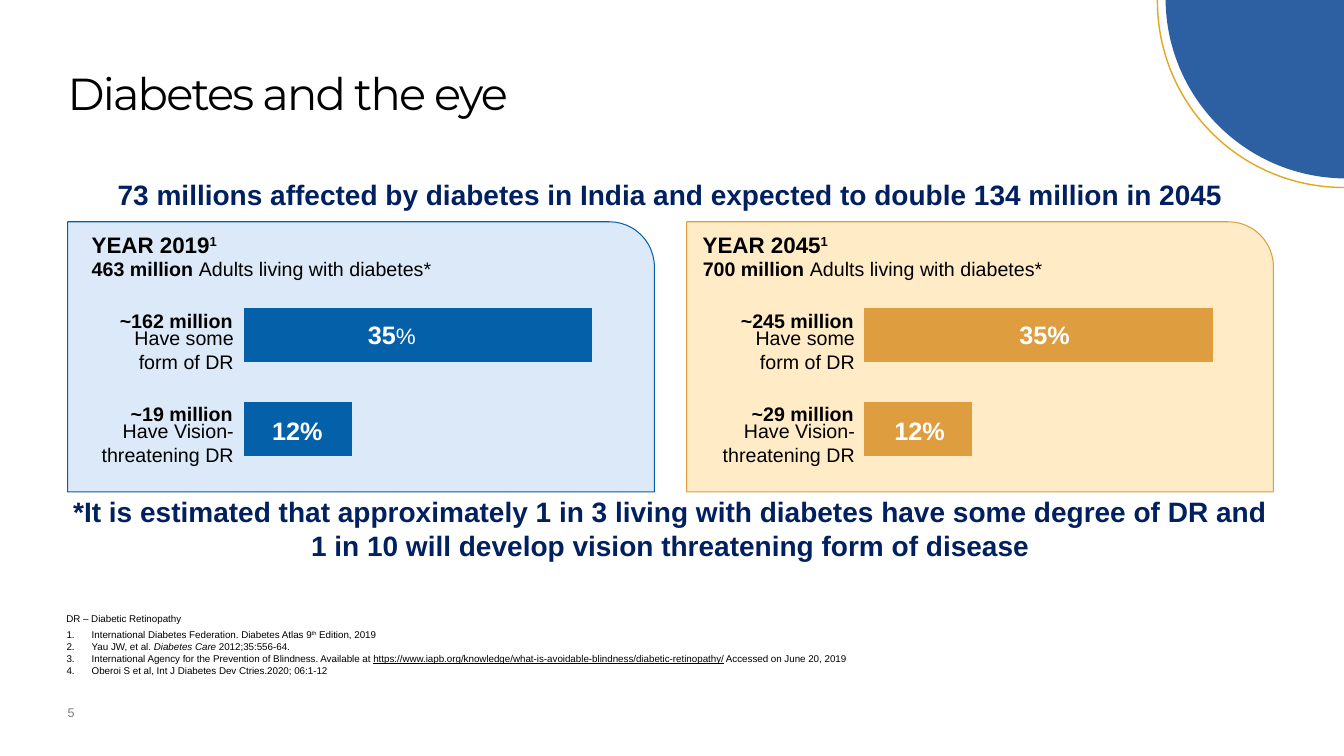
"""Build the slide on diabetes and the eye."""
from lxml.etree import SubElement
from pptx import Presentation
from pptx.chart.data import CategoryChartData
from pptx.dml.color import RGBColor
from pptx.enum.chart import XL_CHART_TYPE
from pptx.enum.shapes import MSO_SHAPE
from pptx.enum.text import MSO_ANCHOR, MSO_AUTO_SIZE, PP_ALIGN
from pptx.oxml import parse_xml
from pptx.oxml.ns import nsdecls, qn
from pptx.util import Inches, Pt

TITLE = "Diabetes and the eye"
BANNERS = [
    (1.76, 0.33, "73 millions affected by diabetes in India and expected to double 134 million in 2045"),
    (4.93, 0.62, "*It is estimated that approximately 1 in 3 living with diabetes have some degree "
                 "of DR and 1 in 10 will develop vision threatening form of disease"),
]
PANELS = [
    dict(left=0.67, fill="DCE9F8", alpha=100, line="0460A9", head=0.91, chart=2.21, label=1.45,
         year="YEAR 2019", total="463 million ", counts=["~162 million", "~19 million"],
         rates=[(3.65, [("35", "b"), ("%", "", 16)]), (2.7, [("12%", "b")])]),
    dict(left=6.81, fill="FFDB93", alpha=51, line="DE9D3F", head=6.97, chart=8.36, label=7.61,
         year="YEAR 2045", total="700 million ", counts=["~245 million", "~29 million"],
         rates=[(10.11, [("35%", "b")]), (8.87, [("12%", "b")])]),
]
GROUPS = [["Have some", "form of DR"], ["Have Vision-", "threatening DR"]]
BARS = [("1", 31), ("2", 100)]
REFS = [
    [("International Diabetes Federation. Diabetes Atlas 9", ""), ("th", "^"), (" Edition, 2019", "")],
    [("Yau JW, et al. ", ""), ("Diabetes Care ", "i"), ("2012;35:556-64.", "")],
    [("International Agency for the Prevention of Blindness. Available at ", ""),
     ("https://www.iapb.org/knowledge/what-is-avoidable-blindness/diabetic-retinopathy/", "u"),
     (" Accessed on June 20, 2019", "")],
    [("Oberoi S et al, Int J Diabetes Dev Ctries.2020; 06:1-12", "")],
]
CORNER = [
    (MSO_SHAPE.PIE, 11.56, -1.81, 3.58, (108.29, 162), "2D5FA3", None),
    (MSO_SHAPE.BLOCK_ARC, 11.48, -1.83, 3.69, (107.95, 162.65, 0), None, "E4A720"),
]


def rgb(code):
    return RGBColor.from_string(code)


def place(item, *box):
    item.left, item.top, item.width, item.height = map(Inches, box)


def write(par, runs, size, color="000000", face="Arial"):
    for text, style, *own in runs:
        run = par.add_run()
        run.text = text
        font = run.font
        font.name, font.size = face, Pt(own[0] if own else size)
        font.bold, font.italic, font.underline = ("b" in style, "i" in style, "u" in style)
        font.color.rgb = rgb(color)
        if "^" in style:
            font._element.set("baseline", "30000")


def setup(frame, inset=(0, 0), wrap=True, anchor=MSO_ANCHOR.MIDDLE):
    frame.margin_left = frame.margin_right = Inches(inset[0])
    frame.margin_top = frame.margin_bottom = Inches(inset[1])
    frame.word_wrap, frame.vertical_anchor = wrap, anchor
    frame.auto_size = MSO_AUTO_SIZE.NONE


def add_text(box, lines, size, color="000000", align=PP_ALIGN.LEFT, **opts):
    frame = slide.shapes.add_textbox(*map(Inches, box)).text_frame
    setup(frame, **opts)
    par = frame.paragraphs[0]
    par.alignment = align
    for num, runs in enumerate(lines):
        if num:
            par.add_line_break()
        write(par, runs, size, color)


def add_form(kind, box, fill, line, width):
    form = slide.shapes.add_shape(kind, *map(Inches, box))
    form.shadow.inherit = False
    if fill:
        form.fill.solid()
        form.fill.fore_color.rgb = rgb(fill)
    else:
        form.fill.background()
    if line:
        form.line.color.rgb, form.line.width = rgb(line), Pt(width)
    else:
        form.line.fill.background()
    return form


def add_bars(left, color):
    data = CategoryChartData()
    data.categories = [name for name, _ in BARS]
    data.add_series("Series 1", [value for _, value in BARS])
    chart = slide.shapes.add_chart(XL_CHART_TYPE.BAR_CLUSTERED, Inches(left), Inches(2.78),
                                   Inches(4.37), Inches(2.09), data).chart
    chart.has_legend = chart.has_title = False
    chart.font.size, chart.font.name = Pt(10), "Arial"
    chart.font.color.rgb = rgb("000000")
    axis = chart.value_axis
    axis.minimum_scale, axis.maximum_scale = 0, 114.5
    axis.has_major_gridlines = False
    axis.visible = chart.category_axis.visible = False
    plot = chart.plots[0]
    plot.gap_width, plot.overlap, plot.vary_by_categories = 72, 20, False
    fill = plot.series[0].format.fill
    fill.solid()
    fill.fore_color.rgb = rgb(color)
    area = chart._chartSpace.chart.plotArea
    for old in area.findall(qn("c:layout")):
        area.remove(old)
    spots = {"x": 0.047, "y": 0.038, "w": 0.907, "h": 0.892}
    rows = '<c:layoutTarget val="inner"/><c:xMode val="edge"/><c:yMode val="edge"/>'
    rows += "".join(f'<c:{key} val="{val}"/>' for key, val in spots.items())
    area.insert(0, parse_xml(f'<c:layout {nsdecls("c")}><c:manualLayout>{rows}</c:manualLayout></c:layout>'))


def add_panel(data):
    form = add_form(MSO_SHAPE.ROUND_1_RECTANGLE, (data["left"], 2.2, 5.82, 2.68),
                    data["fill"], data["line"], 0.75)
    if data["alpha"] < 100:
        color = form._element.spPr.find(qn("a:solidFill"))[0]
        SubElement(color, qn("a:alpha")).set("val", str(data["alpha"] * 1000))
    add_bars(data["chart"], data["line"])
    add_text((data["head"], 2.23, 2, 0.39), [[(data["year"], "b"), ("1", "b^")]], 16, wrap=False)
    add_text((data["head"], 2.57, 3.98, 0.2),
             [[(data["total"], "b"), ("Adults living with diabetes*", "")]], 14, wrap=False)
    for num, (count, group, rate) in enumerate(zip(data["counts"], GROUPS, data["rates"])):
        top = 3.08 + num * 0.92
        add_text((data["label"], top, 0.86, 0.2), [[(count, "b")]], 14,
                 align=PP_ALIGN.RIGHT, wrap=False)
        add_text((data["label"] + 0.01, top + 0.29, 0.86, 0.2), [[(line, "")] for line in group],
                 14, align=PP_ALIGN.RIGHT, wrap=False)
        add_text((rate[0], 3.22 + num * 0.95, 0.86, 0.2), [rate[1]], 18, "FFFFFF", wrap=False)


def add_refs(body):
    place(body, 0.56, 6.19, 12.77, 0.69)
    frame = body.text_frame
    setup(frame, (0.1, 0.05), anchor=MSO_ANCHOR.TOP)
    for num, runs in enumerate(REFS):
        par = frame.add_paragraph() if num else frame.paragraphs[0]
        props = par._p.get_or_add_pPr()
        props.set("marL", str(Inches(0.25)))
        props.set("indent", str(-Inches(0.25)))
        SubElement(props, qn("a:buAutoNum")).set("type", "arabicPeriod")
        par.space_before = Pt(0)
        write(par, runs, 7)


deck = Presentation()
deck.slide_width, deck.slide_height = Inches(13.33), Inches(7.5)
slide = deck.slides.add_slide(deck.slide_layouts[1])

for kind, left, top, size, turns, fill, line in CORNER:
    form = add_form(kind, (left, top, size, size), fill, line, 1)
    form.rotation = 270
    for num, turn in enumerate(turns):
        form.adjustments[num] = turn

title = slide.shapes.title
place(title, 0.67, 0.2, 10.87, 1.5)
setup(title.text_frame)
head = title.text_frame.paragraphs[0]
head.alignment, head.line_spacing = PP_ALIGN.LEFT, 0.9
write(head, [(TITLE, "")], 32, face="Montserrat")
head.runs[0].font._element.set("spc", "-130")

for data in PANELS:
    add_panel(data)
for top, tall, text in BANNERS:
    add_text((0.67, top, 11.96, tall), [[(text, "b")]], 20, "002060", PP_ALIGN.CENTER)
add_text((0.56, 6.03, 9.56, 0.22), [[("DR – Diabetic Retinopathy", "")]], 7,
         inset=(0.1, 0.05), anchor=MSO_ANCHOR.TOP)
add_refs(slide.placeholders[1])
add_text((0.67, 6.99, 0.33, 0.43), [[("5", "")]], 9, "7F7F7F", anchor=MSO_ANCHOR.TOP)
deck.save("out.pptx")
